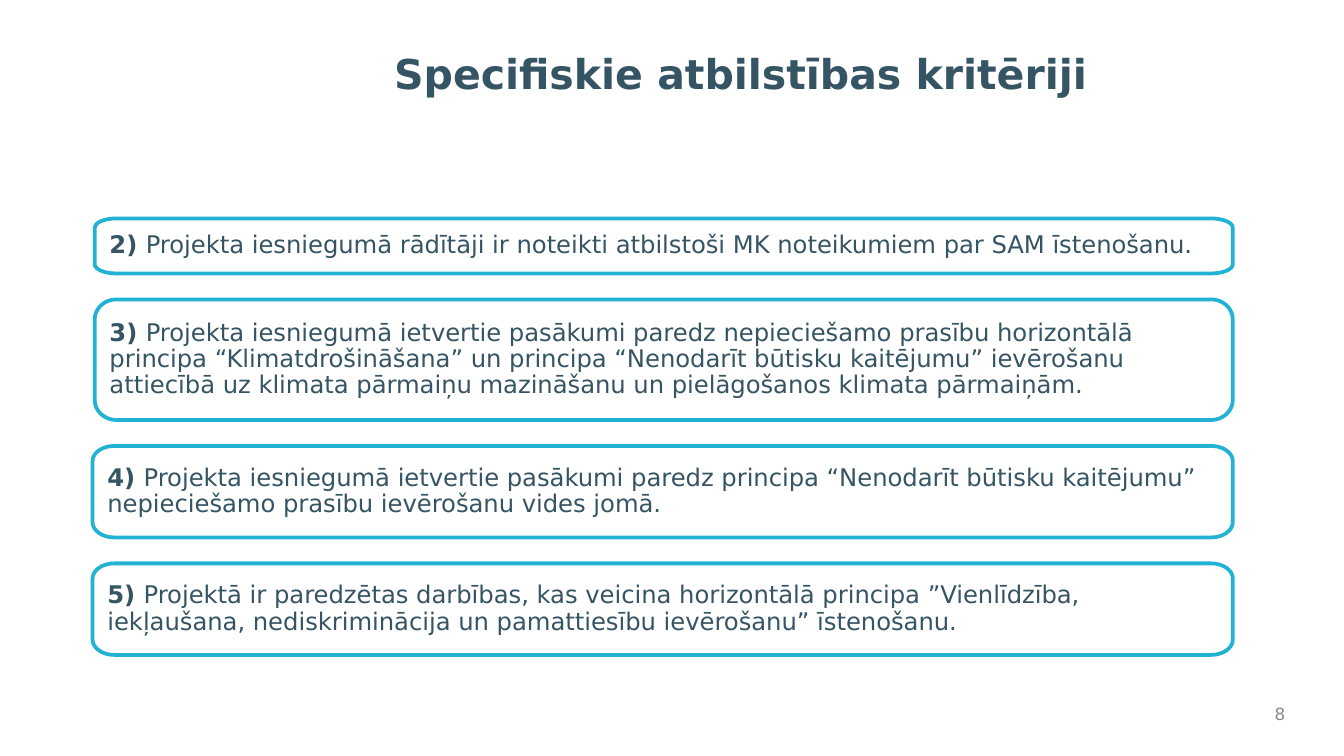
from lxml import etree
from pptx import Presentation
from pptx.dml.color import RGBColor
from pptx.enum import text
from pptx.oxml.ns import qn
from pptx.util import Cm, Pt

# Content
TITLE = "Specifiskie atbilstības kritēriji"
PAGE_NUMBER = "8"
CRITERIA = [  # number, wording, left edge and height in cm
    ("2) ", "Projekta iesniegumā rādītāji ir noteikti atbilstoši MK noteikumiem "
     "par SAM īstenošanu.", 1.79, 1.04),
    ("3) ", "Projekta iesniegumā ietvertie pasākumi paredz nepieciešamo prasību "
     "horizontālā principa “Klimatdrošināšana” un principa “Nenodarīt būtisku "
     "kaitējumu” ievērošanu attiecībā uz klimata pārmaiņu mazināšanu un "
     "pielāgošanos klimata pārmaiņām.", 1.79, 2.28),
    ("4) ", "Projekta iesniegumā ietvertie pasākumi paredz principa “Nenodarīt "
     "būtisku kaitējumu” nepieciešamo prasību ievērošanu vides jomā.", 1.75, 1.73),
    ("5) ", "Projektā ir paredzētas darbības, kas veicina horizontālā principa "
     "”Vienlīdzība, iekļaušana, nediskriminācija un pamattiesību ievērošanu” "
     "īstenošanu.", 1.75, 1.73),
]

THEME = {
    "font": "DejaVu Sans",
    "ink": RGBColor.from_string("355464"),
    "muted": RGBColor.from_string("898989"),
    "outline": RGBColor.from_string("22B2D3"),
    "paper": RGBColor.from_string("FFFFFF"),
    "title": Pt(22), "body": Pt(13), "number": Pt(9), "line": Pt(2),
}

# Layout in cm
FIRST_TOP, RIGHT, GAP = 4.13, 23.3, 0.49
CORNER_WIDTH, CORNER_SHARE = 0.41, 1 / 6
ROUNDNESS = 0.55


def set_attributes(target, values):
    for name, value in values.items():
        setattr(target, name, value)


def format_frame(frame, anchor, side, vertical):
    set_attributes(frame, {
        "word_wrap": True, "auto_size": text.MSO_AUTO_SIZE.NONE,
        "vertical_anchor": anchor, "margin_left": Cm(side),
        "margin_right": Cm(side), "margin_top": Cm(vertical),
        "margin_bottom": Cm(vertical)})


def add_run(paragraph, wording, size, color, bold=False):
    run = paragraph.add_run()
    run.text = wording
    set_attributes(run.font, {"name": THEME["font"], "size": THEME[size], "bold": bold})
    run.font.color.rgb = THEME[color]


def round_corners(shape):
    """Turn every second edge of the eight-point outline into a curve."""
    points = list(shape.element.iter(qn("a:pt")))
    places = [(int(point.get("x")), int(point.get("y"))) for point in points]
    for index in range(0, len(points), 2):
        start, end = places[index], places[index + 1]
        # Edges alternate between leaving vertically and horizontally
        corner = (start[0], end[1]) if index % 4 == 0 else (end[0], start[1])
        edge = points[index + 1].getparent()
        edge.tag = qn("a:cubicBezTo")
        for position, origin in enumerate((start, end)):
            control = etree.Element(qn("a:pt"))
            for axis, value, target in zip("xy", origin, corner):
                control.set(axis, str(round(value + ROUNDNESS * (target - value))))
            edge.insert(position, control)


def add_rounded_box(slide, left, top, height):
    """Box whose corners are quarter ellipses, flatter on lower boxes."""
    bottom, radius_y = top + height, height * CORNER_SHARE
    near, far = left + CORNER_WIDTH, RIGHT - CORNER_WIDTH
    upper, lower = top + radius_y, bottom - radius_y
    outline = [(left, upper), (near, top), (far, top), (RIGHT, upper),
               (RIGHT, lower), (far, bottom), (near, bottom), (left, lower)]
    points = [(Cm(x), Cm(y)) for x, y in outline]
    builder = slide.shapes.build_freeform(*points[0])
    builder.add_line_segments(points[1:], close=True)
    shape = builder.convert_to_shape()
    round_corners(shape)
    shape.shadow.inherit = False
    shape.fill.solid()
    shape.fill.fore_color.rgb = THEME["paper"]
    shape.line.color.rgb = THEME["outline"]
    shape.line.width = THEME["line"]
    return shape


def main():
    presentation = Presentation()
    set_attributes(presentation, {"slide_width": Cm(25.4), "slide_height": Cm(14.29)})
    slide = presentation.slides.add_slide(presentation.slide_layouts[5])

    # Title
    title = slide.shapes.title
    set_attributes(title, {"left": Cm(7.2), "top": Cm(0.79),
                           "width": Cm(16.94), "height": Cm(2.16)})
    format_frame(title.text_frame, text.MSO_ANCHOR.TOP, 0.25, 0.13)
    paragraph = title.text_frame.paragraphs[0]
    paragraph.alignment = text.PP_ALIGN.LEFT
    add_run(paragraph, TITLE, "title", "ink", bold=True)

    # Page number
    number_box = slide.shapes.add_textbox(Cm(23.7), Cm(13.18), Cm(0.84), Cm(0.64))
    format_frame(number_box.text_frame, text.MSO_ANCHOR.MIDDLE, 0.25, 0.13)
    paragraph = number_box.text_frame.paragraphs[0]
    paragraph.alignment = text.PP_ALIGN.RIGHT
    add_run(paragraph, PAGE_NUMBER, "number", "muted")

    # Criteria stacked with equal gaps
    top = FIRST_TOP
    for number, wording, left, height in CRITERIA:
        box = add_rounded_box(slide, left, top, height)
        format_frame(box.text_frame, text.MSO_ANCHOR.MIDDLE, 0.28, 0.28)
        paragraph = box.text_frame.paragraphs[0]
        set_attributes(paragraph, {"alignment": text.PP_ALIGN.LEFT, "line_spacing": 0.9})
        add_run(paragraph, number, "body", "ink", bold=True)
        add_run(paragraph, wording, "body", "ink")
        top += height + GAP

    presentation.save("out.pptx")


if __name__ == "__main__":
    main()
